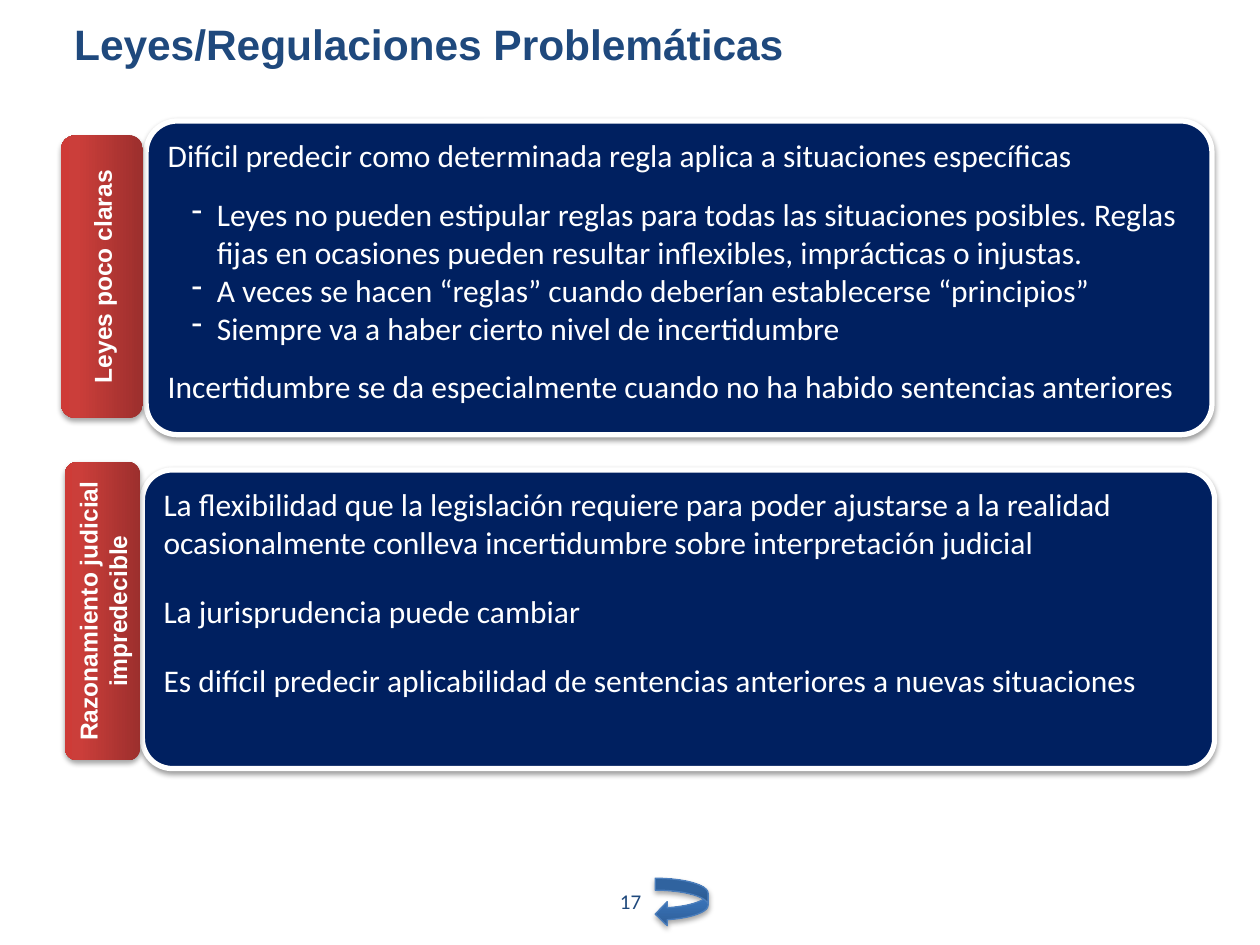
import pptx
import pptx.dml.color
import pptx.enum.shapes
import pptx.enum.text
import pptx.oxml
import pptx.oxml.ns
import pptx.util
import lxml.etree

COLUMNS, ROWS = 100, 75
WHITE, NAVY, BLUE = "FFFFFF", "002060", "1F497D"
RED_STOPS = ((0, "9C2F2D"), (80, "CB3E3A"), (100, "CE3B37"))
BLUE_STOPS = ((0, "2F5F99"), (80, "3D7CC7"), (100, "3A7CCB"))
SHAPE = pptx.enum.shapes.MSO_SHAPE
ANCHOR = pptx.enum.text.MSO_ANCHOR
CENTER = pptx.enum.text.PP_ALIGN.CENTER


def color(hex_string):
    return pptx.dml.color.RGBColor.from_string(hex_string)


def add_child(parent, tag, **attributes):
    child = lxml.etree.SubElement(parent, pptx.oxml.ns.qn(tag))
    for name, value in attributes.items():
        child.set(name, str(value))
    return child


def add_color(parent, hex_string):
    return add_child(parent, "a:srgbClr", val=hex_string)


def write(paragraph, text, size=18, font="Calibri", ink=WHITE, bold=False,
          align=None, before=0, after=0, dash=False):
    if dash:
        paragraph.level = 1
        properties = paragraph._p.get_or_add_pPr()
        properties.set("marL", str(pptx.util.Inches(0.39)))
        properties.set("indent", str(pptx.util.Inches(-0.2)))
        add_child(properties, "a:buChar", char="-")
    paragraph.alignment = align
    paragraph.space_before = pptx.util.Pt(before)
    paragraph.space_after = pptx.util.Pt(after)
    run = paragraph.add_run()
    run.text = text
    run.font.size = pptx.util.Pt(size)
    run.font.name = font
    run.font.bold = bold
    run.font.color.rgb = color(ink)


class SlideBuilder:
    """Holds the style and the slide; places are given in grid columns and rows."""

    def __init__(self, deck):
        self.deck = deck
        self.slide = deck.slides.add_slide(deck.slide_layouts[6])

    def place(self, left, top, width, height):
        column = self.deck.slide_width / COLUMNS
        row = self.deck.slide_height / ROWS
        return [round(length) for length in
                (left * column, top * row, width * column, height * row)]

    def text(self, place, words, anchor, top_inset=0.05, **style):
        frame = self.slide.shapes.add_textbox(*self.place(*place)).text_frame
        frame.word_wrap = True
        frame.vertical_anchor = anchor
        frame.margin_top = pptx.util.Inches(top_inset)
        write(frame.paragraphs[0], words, **style)

    def shadow(self, shape, opacity, distance):
        shape.shadow.inherit = False
        effects = shape._element.spPr.find(pptx.oxml.ns.qn("a:effectLst"))
        outer = add_child(effects, "a:outerShdw", blurRad=pptx.util.Pt(3.1),
                          dist=pptx.util.Pt(distance), dir=5400000, rotWithShape=0)
        add_child(add_color(outer, "000000"), "a:alpha", val=opacity * 1000)

    def gradient(self, shape, stops):
        """Fill from the bottom edge up to the top edge of the unrotated shape."""
        shape.fill.gradient()
        shape.fill.gradient_angle = 90
        stop_list = next(shape._element.spPr.iter(pptx.oxml.ns.qn("a:gsLst")))
        for old_stop in list(stop_list):
            stop_list.remove(old_stop)
        for share, hex_string in stops:
            add_color(add_child(stop_list, "a:gs", pos=share * 1000), hex_string)

    def card(self, group, place, paragraphs):
        card = group.shapes.add_shape(SHAPE.ROUNDED_RECTANGLE, *self.place(*place))
        card.adjustments[0] = 0.1
        card.fill.solid()
        card.fill.fore_color.rgb = color(NAVY)
        card.line.color.rgb = color(WHITE)
        card.line.width = pptx.util.Pt(3)
        self.shadow(card, 38, 1.6)
        frame = card.text_frame
        frame.word_wrap = True
        frame.vertical_anchor = ANCHOR.TOP
        for index, (words, style) in enumerate(paragraphs):
            paragraph = frame.add_paragraph() if index else frame.paragraphs[0]
            write(paragraph, words, align=pptx.enum.text.PP_ALIGN.LEFT, **style)

    def side_tab(self, group, place, label):
        """Place is the upright area the tab covers once turned."""
        left, top, width, height = place
        shift = (height - width) / 2
        tab = group.shapes.add_shape(
            SHAPE.ROUNDED_RECTANGLE,
            *self.place(left - shift, top + shift, height, width))
        tab.rotation = 270
        self.gradient(tab, RED_STOPS)
        tab.line.fill.background()
        self.shadow(tab, 35, 1.8)
        tab.text_frame.word_wrap = True
        tab.text_frame.vertical_anchor = ANCHOR.MIDDLE
        write(tab.text_frame.paragraphs[0], label, size=14, font="Arial",
              bold=True, align=CENTER)

    def topic(self, card_place, paragraphs, tab_place, label):
        group = self.slide.shapes.add_group_shape()
        self.card(group, card_place, paragraphs)
        self.side_tab(group, tab_place, label)

    def return_arrow(self, place):
        arrow = self.slide.shapes.add_shape(SHAPE.CURVED_LEFT_ARROW, *self.place(*place))
        self.gradient(arrow, BLUE_STOPS)
        arrow.line.color.rgb = color("4B7EBC")
        arrow.line.width = pptx.util.Pt(0.75)
        self.shadow(arrow, 35, 1.8)


def main():
    deck = pptx.Presentation()
    deck.slide_width = pptx.util.Inches(10)
    deck.slide_height = pptx.util.Inches(7.5)
    builder = SlideBuilder(deck)

    builder.text((34.2, 69.5, 31.7, 4), "17", ANCHOR.MIDDLE,
                 size=12, ink=BLUE, align=CENTER)
    builder.text((4.9, 0.6, 90, 9.1), "Leyes/Regulaciones Problemáticas", ANCHOR.TOP,
                 top_inset=0.08, size=24.3, font="Arial", ink=BLUE, bold=True)

    reasoning = (
        ("La flexibilidad que la legislación requiere para poder ajustarse a la realidad "
         "ocasionalmente conlleva incertidumbre sobre interpretación judicial", {"after": 12}),
        ("La jurisprudencia puede cambiar", {"before": 6, "after": 12}),
        ("Es difícil predecir aplicabilidad de sentencias anteriores a nuevas situaciones",
         {"before": 6, "after": 12}),
    )
    builder.topic((11.3, 37.3, 85.1, 23.7), reasoning,
                  (5.15, 36.65, 6, 23.7), "Razonamiento judicial impredecible")

    unclear_laws = (
        ("Difícil predecir como determinada regla aplica a situaciones específicas", {}),
        ("Leyes no pueden estipular reglas para todas las situaciones posibles. Reglas fijas "
         "en ocasiones pueden resultar inflexibles, imprácticas o injustas.",
         {"before": 12, "dash": True}),
        ("A veces se hacen “reglas” cuando deberían establecerse “principios”", {"dash": True}),
        ("Siempre va a haber cierto nivel de incertidumbre", {"dash": True}),
        ("Incertidumbre se da especialmente cuando no ha habido sentencias anteriores",
         {"before": 12}),
    )
    builder.topic((11.6, 9.6, 84.6, 24.9), unclear_laws,
                  (4.85, 10.75, 6.5, 22.4), "Leyes poco claras")

    builder.return_arrow((52, 69.7, 4.2, 3.8))
    deck.save("out.pptx")


if __name__ == "__main__":
    main()
